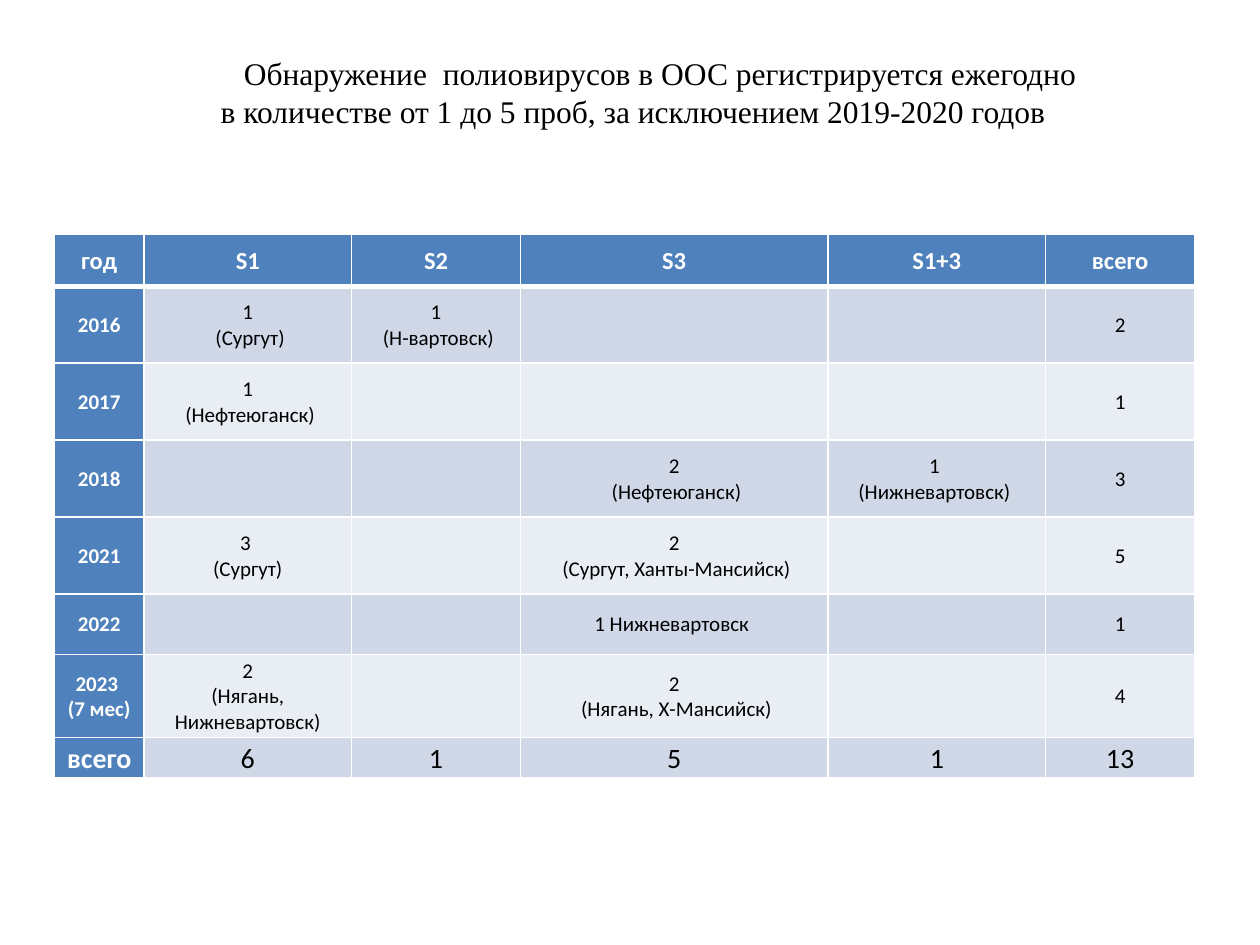
"""Build a slide with a table of poliovirus findings by year and serotype."""
from lxml.etree import SubElement
from pptx import Presentation
from pptx.dml.color import RGBColor
from pptx.enum.text import MSO_ANCHOR, PP_ALIGN
from pptx.oxml.ns import qn
from pptx.util import Cm, Pt

TITLE = [
    "Обнаружение  полиовирусов в ООС регистрируется ежегодно ",
    "в количестве от 1 до 5 проб, за исключением 2019-2020 годов",
]
ROWS = [
    ["год", "S1", "S2", "S3", "S1+3", "всего"],
    ["2016", "1\n (Сургут)", "1\n (Н-вартовск)", "", "", "2"],
    ["2017", "1\n (Нефтеюганск)", "", "", "", "1"],
    ["2018", "", "", "2\n (Нефтеюганск)", "1 \n(Нижневартовск) ", "3"],
    ["2021", "3 \n(Сургут)", "", "2\n (Сургут, Ханты-Мансийск)", "", "5"],
    ["2022", "", "", "1 Нижневартовск ", "", "1"],
    ["2023 \n(7 мес)", "2\n(Нягань, Нижневартовск)", "", "2\n (Нягань, Х-Мансийск)", "", "4"],
    ["всего", "6", "1", "5", "1", "13"],
]
WIDTHS = [1.8, 4.19, 3.4, 6.2, 4.39, 3.0]
HEIGHTS = [1.04, 1.55, 1.55, 1.55, 1.55, 1.22, 1.68, 0.81]
BLUE, BANDS, WHITE, BLACK = "4F81BD", ["E9EDF4", "D0D8E8"], "FFFFFF", "000000"


def color(value):
    return RGBColor.from_string(value)


def add_span(para, text, size, font, ink, bold=False):
    span = para.add_run()
    span.text = text
    span.font.size = Pt(size)
    span.font.name = font
    span.font.bold = bold
    span.font.color.rgb = color(ink)


def add_title(page):
    box = page.shapes.title
    box.left, box.top, box.width, box.height = Cm(2.29), Cm(0.79), Cm(20.95), Cm(2.13)
    box.text_frame.vertical_anchor = MSO_ANCHOR.MIDDLE
    para = box.text_frame.paragraphs[0]
    para.alignment = PP_ALIGN.CENTER
    para._p.get_or_add_pPr().set("indent", str(Cm(1.25)))
    for index, line in enumerate(TITLE):
        if index:
            para.add_line_break()
        add_span(para, line, 18, "Times New Roman", BLACK)


def add_borders(cell, row):
    points = {"lnL": 1, "lnR": 1, "lnT": 3 if row == 1 else 1, "lnB": 3 if row == 0 else 1}
    properties = cell._tc.get_or_add_tcPr()
    for side, width in points.items():
        line = SubElement(properties, qn(f"a:{side}"), w=str(Pt(width)))
        fill = SubElement(line, qn("a:solidFill"))
        SubElement(fill, qn("a:srgbClr"), val=WHITE)


def fill_cell(cell, text, row, column):
    heading = row == 0 or column == 0
    size = {0: 14, len(ROWS) - 1: 16}.get(row, 12)
    add_borders(cell, row)
    cell.fill.solid()
    cell.fill.fore_color.rgb = color(BLUE if heading else BANDS[row % 2])
    cell.vertical_anchor = MSO_ANCHOR.MIDDLE
    cell.margin_left = cell.margin_right = cell.margin_top = Cm(0.03)
    cell.margin_bottom = 0
    for index, line in enumerate(text.split("\n") if text else []):
        frame = cell.text_frame
        para = frame.add_paragraph() if index else frame.paragraphs[0]
        para.alignment = PP_ALIGN.CENTER
        add_span(para, line, size, "Calibri", WHITE if heading else BLACK, heading)


def add_findings(page):
    table = page.shapes.add_table(
        len(ROWS), len(WIDTHS), Cm(1.1), Cm(4.73), Cm(sum(WIDTHS)), Cm(sum(HEIGHTS))
    ).table
    table.first_col = True
    for column, width in zip(table.columns, WIDTHS):
        column.width = Cm(width)
    for row, (texts, height) in enumerate(zip(ROWS, HEIGHTS)):
        table.rows[row].height = Cm(height)
        for column, text in enumerate(texts):
            fill_cell(table.cell(row, column), text, row, column)


def main():
    deck = Presentation()
    deck.slide_width, deck.slide_height = Cm(25.4), Cm(19.05)
    page = deck.slides.add_slide(deck.slide_layouts[5])
    add_title(page)
    add_findings(page)
    deck.save("out.pptx")


if __name__ == "__main__":
    main()
